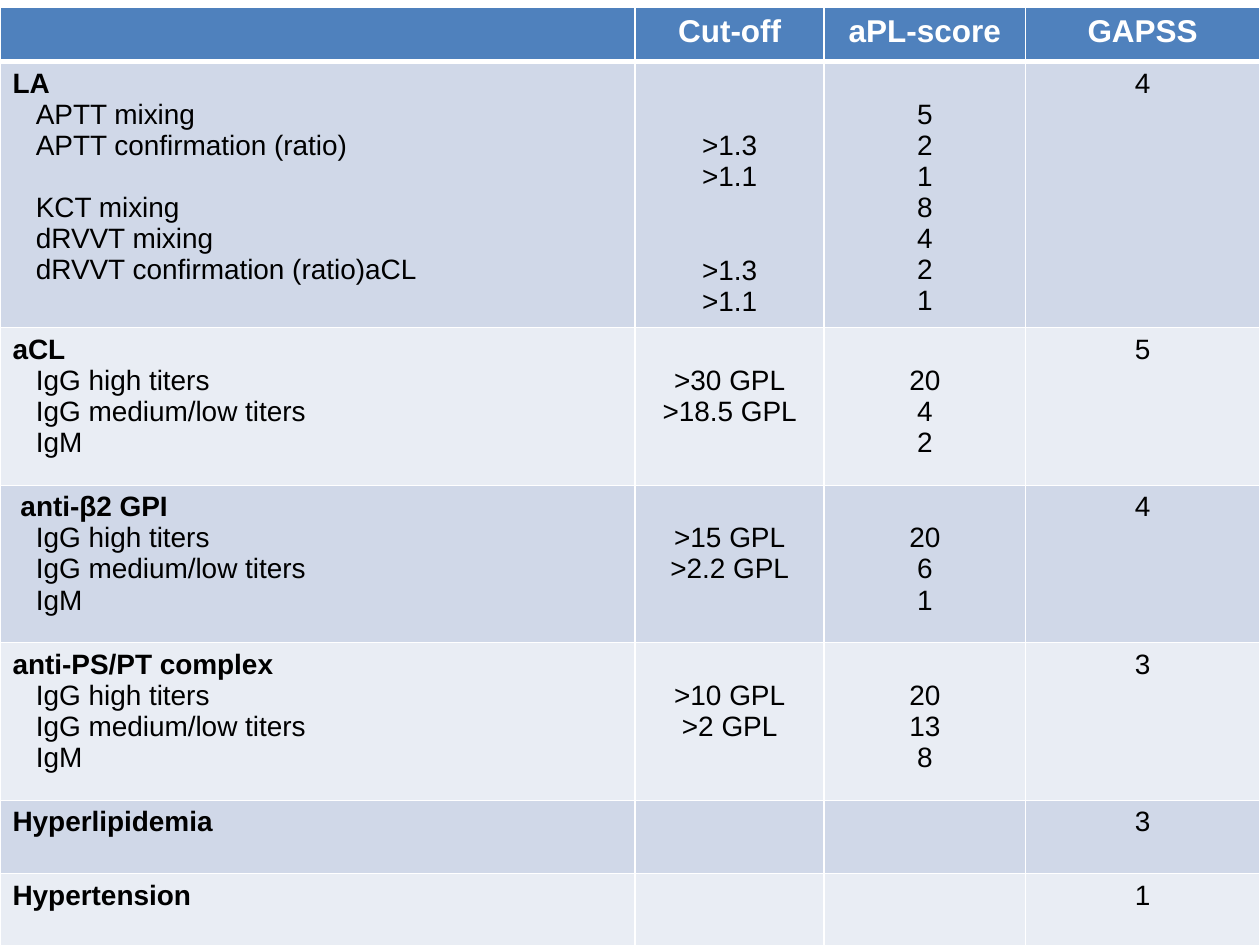
from lxml.etree import SubElement
from pptx import Presentation
from pptx.dml.color import RGBColor
from pptx.enum.text import PP_ALIGN
from pptx.oxml.ns import qn
from pptx.util import Pt

LINE = 17.8  # height of one 16 pt text line
INDENT = 13.3
COLUMN_WIDTHS = [363, 108, 115, 134]
ROW_HEIGHTS = [31, 152, 90, 90, 90, 42, 42]
HEADER_FILL = "4F81BD"
BAND_FILLS = ["D0D8E8", "E9EDF4"]
WHITE, BLACK = "FFFFFF", "000000"

HEADINGS = ["", "Cut-off", "aPL-score", "GAPSS"]
TITERS = ["IgG high titers", "IgG medium/low titers", "IgM"]
# Heading, heading indent, tests, cut-offs, aPL-scores, GAPSS.
# An empty string leaves one line free, so values stay level with their tests.
CRITERIA = [
    ("LA", 0,
     ["APTT mixing", "APTT confirmation (ratio)", "", "KCT mixing",
      "dRVVT mixing", "dRVVT confirmation (ratio)aCL"],
     ["", "", ">1.3", ">1.1", "", "", ">1.3", ">1.1"],
     ["", "5", "2", "1", "8", "4", "2", "1"], "4"),
    ("aCL", 0, TITERS, ["", ">30 GPL", ">18.5 GPL"], ["", "20", "4", "2"], "5"),
    ("anti-β2 GPI", 4.5, TITERS, ["", ">15 GPL", ">2.2 GPL"],
     ["", "20", "6", "1"], "4"),
    ("anti-PS/PT complex", 0, TITERS, ["", ">10 GPL", ">2 GPL"],
     ["", "20", "13", "8"], "3"),
    ("Hyperlipidemia", 0, [], [], [], "3"),
    ("Hypertension", 0, [], [], [], "1"),
]


def rgb(value):
    return RGBColor.from_string(value)


def format_cell(cell, fill, bottom_width=1):
    """Set white borders and the fill; borders must come first in the XML."""
    properties = cell._tc.get_or_add_tcPr()
    widths = {"a:lnL": 1, "a:lnR": 1, "a:lnT": 1, "a:lnB": bottom_width}
    for tag, width in widths.items():
        border = SubElement(properties, qn(tag), w=str(Pt(width)))
        SubElement(SubElement(border, qn("a:solidFill")), qn("a:srgbClr"), val=WHITE)
    cell.fill.solid()
    cell.fill.fore_color.rgb = rgb(fill)


def write_paragraph(paragraph, text, size=16, bold=False, color=BLACK,
                    align=PP_ALIGN.CENTER, indent=0):
    paragraph.alignment = align
    if indent:
        paragraph._p.get_or_add_pPr().set("marL", str(Pt(indent)))
    run = paragraph.add_run()
    run.text = text
    for name, value in {"name": "Arial", "size": Pt(size), "bold": bold}.items():
        setattr(run.font, name, value)
    run.font.color.rgb = rgb(color)


def write_lines(cell, lines, formats=None):
    """Write the lines, turning free lines into a top margin or space before."""
    free = 0
    started = False
    for index, text in enumerate(lines):
        if not text:
            free += 1
            continue
        if started:
            paragraph = cell.text_frame.add_paragraph()
            paragraph.space_before = Pt(free * LINE)
        else:
            paragraph = cell.text_frame.paragraphs[0]
            cell.margin_top = Pt(3.6 + free * LINE)
        write_paragraph(paragraph, text, **(formats[index] if formats else {}))
        started, free = True, 0


def fill_header(cells):
    for cell, heading in zip(cells, HEADINGS):
        format_cell(cell, HEADER_FILL, bottom_width=3)
        write_lines(cell, [heading], [{"size": 18, "bold": True, "color": WHITE}])


def fill_criterion(cells, criterion, fill):
    heading, heading_indent, tests, cutoffs, scores, gapss = criterion
    for cell in cells:
        format_cell(cell, fill)
    heading_format = {"bold": True, "align": PP_ALIGN.LEFT, "indent": heading_indent}
    test_format = {"align": PP_ALIGN.LEFT, "indent": INDENT}
    write_lines(cells[0], [heading] + tests,
                [heading_format] + [test_format] * len(tests))
    for cell, lines in zip(cells[1:], [cutoffs, scores, [gapss]]):
        write_lines(cell, lines)


def add_score_table(slide, left, top, width, height):
    table = slide.shapes.add_table(
        len(ROW_HEIGHTS), len(COLUMN_WIDTHS),
        Pt(left), Pt(top), Pt(width), Pt(height)).table
    table.horz_banding = False
    for column, column_width in zip(table.columns, COLUMN_WIDTHS):
        column.width = Pt(column_width)
    for row, row_height in zip(table.rows, ROW_HEIGHTS):
        row.height = Pt(row_height)
    rows = [list(row.cells) for row in table.rows]
    fill_header(rows[0])
    for index, (cells, criterion) in enumerate(zip(rows[1:], CRITERIA)):
        fill_criterion(cells, criterion, BAND_FILLS[index % 2])


def main():
    presentation = Presentation()
    presentation.slide_width, presentation.slide_height = Pt(720), Pt(540)
    slide = presentation.slides.add_slide(presentation.slide_layouts[6])
    add_score_table(slide, 0, 4.3, sum(COLUMN_WIDTHS), sum(ROW_HEIGHTS))
    presentation.save("out.pptx")


if __name__ == "__main__":
    main()
